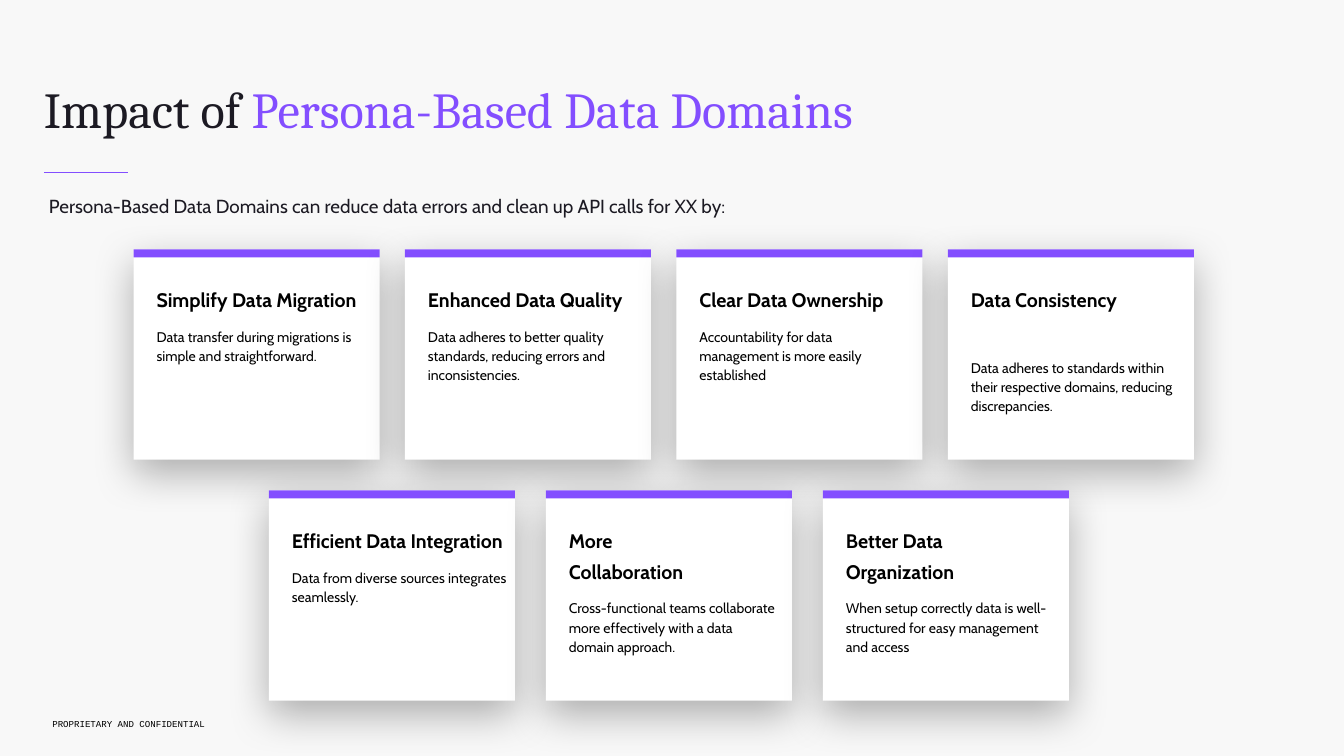
from lxml.etree import SubElement
from pptx import Presentation
from pptx.dml.color import RGBColor
from pptx.enum.shapes import MSO_CONNECTOR, MSO_SHAPE
from pptx.enum.text import MSO_ANCHOR, MSO_AUTO_SIZE
from pptx.oxml.ns import qn
from pptx.util import Cm, Pt

PAPER = RGBColor(0xF8, 0xF8, 0xF8)
WHITE = RGBColor(0xFF, 0xFF, 0xFF)
BLACK = RGBColor(0x00, 0x00, 0x00)
INK = RGBColor(0x1C, 0x1A, 0x23)
VIOLET = RGBColor(0x83, 0x4E, 0xFF)

CARD_W, CARD_H, BAR_H = 12.4, 10.59, 0.4
PAD_X, PAD_Y = 0.91, 1.35

# Each row: left, top, step, cards (title lines, body, text width, text height, gap)
ROWS = [
    (6.73, 12.57, 13.68, [
        (["Simplify Data Migration"],
         "Data transfer during migrations is simple and straightforward.",
         10.72, 6.17, 20),
        (["Enhanced Data Quality"],
         "Data adheres to better quality standards, reducing errors and inconsistencies.",
         11.48, 8.86, 20),
        (["Clear Data Ownership"],
         "Accountability for data management is more easily established",
         10.72, 7.16, 20),
        (["Data Consistency"],
         "Data adheres to standards within their respective domains, reducing discrepancies.",
         10.72, 9.83, 64),
    ]),
    (13.55, 24.72, 13.96, [
        (["Efficient Data Integration"],
         "Data from diverse sources integrates seamlessly.",
         11.84, 7.87, 20),
        (["More", "Collaboration"],
         "Cross-functional teams collaborate more effectively with a data domain approach.",
         10.9, 7.16, 20),
        (["Better Data Organization"],
         "When setup correctly data is well-structured for easy management and access",
         11.07, 7.16, 20),
    ]),
]


def write(par, text, font="Cabin", size=20, color=BLACK, bold=False,
          line=1.15, gap=0):
    """Add a run to a paragraph and set its format."""
    par.line_spacing = line
    par.space_before = Pt(gap)
    run = par.add_run()
    run.text = text
    run.font.name = font
    run.font.size = Pt(size)
    run.font.bold = bold
    run.font.color.rgb = color


class Deck:
    def __init__(self):
        self.show = Presentation()
        self.show.slide_width = Cm(67.74)
        self.show.slide_height = Cm(38.1)
        self.slide = self.show.slides.add_slide(self.show.slide_layouts[6])
        back = self.slide.background.fill
        back.solid()
        back.fore_color.rgb = PAPER

    def text(self, x, y, w, h, inset=0.0, grow=False, home=None):
        home = home or self.slide
        frame = home.shapes.add_textbox(Cm(x), Cm(y), Cm(w), Cm(h)).text_frame
        frame.word_wrap = True
        frame.margin_left = frame.margin_right = Cm(inset)
        frame.margin_top = frame.margin_bottom = Cm(inset)
        if grow:
            frame.auto_size = MSO_AUTO_SIZE.SHAPE_TO_FIT_TEXT
        return frame

    def rect(self, home, x, y, w, h, color, shade=False):
        shape = home.shapes.add_shape(MSO_SHAPE.RECTANGLE,
                                      Cm(x), Cm(y), Cm(w), Cm(h))
        shape.shadow.inherit = False
        shape.fill.solid()
        shape.fill.fore_color.rgb = color
        shape.line.fill.background()
        if shade:
            effect = shape._element.spPr.find(qn("a:effectLst"))
            outer = SubElement(effect, qn("a:outerShdw"),
                               blurRad=str(Pt(60)), dist=str(Pt(20)),
                               dir="5400000", algn="t", rotWithShape="0")
            tone = SubElement(outer, qn("a:srgbClr"), val=str(BLACK))
            SubElement(tone, qn("a:alpha"), val="30000")

    def rule(self, x, y, w):
        line = self.slide.shapes.add_connector(
            MSO_CONNECTOR.STRAIGHT, Cm(x), Cm(y), Cm(x + w), Cm(y))
        line.line.color.rgb = VIOLET
        line.line.width = Pt(1)
        SubElement(line._element.spPr, qn("a:effectLst"))

    def card(self, x, y, heads, body, wide, high, gap):
        group = self.slide.shapes.add_group_shape()
        self.rect(group, x, y, CARD_W, CARD_H, WHITE, shade=True)
        self.rect(group, x, y, CARD_W, BAR_H, VIOLET)
        frame = self.text(x + PAD_X, y + PAD_Y, wide, high,
                          inset=0.25, grow=True, home=group)
        for i, head in enumerate(heads):
            par = frame.add_paragraph() if i else frame.paragraphs[0]
            write(par, head, size=28, bold=True, line=1.3)
        write(frame.add_paragraph(), body, gap=gap)


def main():
    deck = Deck()

    # Footer
    foot = deck.text(2.64, 35.94, 14.76, 0.99)
    foot.vertical_anchor = MSO_ANCHOR.MIDDLE
    write(foot.paragraphs[0], "PROPRIETARY AND CONFIDENTIAL",
          font="Courier New", size=13)

    # Title and rule
    title = deck.text(2.21, 4.11, 59.08, 3.94).paragraphs[0]
    for part, color in (("Impact of ", INK),
                        ("Persona-Based Data Domains", VIOLET)):
        write(title, part, font="Cambria", size=72, color=color, line=0.97)
    deck.rule(2.21, 8.69, 4.24)

    # Lead sentence
    lead = deck.text(2.21, 9.37, 60.1, 1.68, inset=0.25, grow=True)
    write(lead.paragraphs[0],
          "Persona-Based Data Domains can reduce data errors and clean up "
          "API calls for XX by:", size=27, color=INK)

    # Cards
    for left, top, step, cards in ROWS:
        for i, card in enumerate(cards):
            deck.card(left + i * step, top, *card)

    deck.show.save("out.pptx")


if __name__ == "__main__":
    main()
